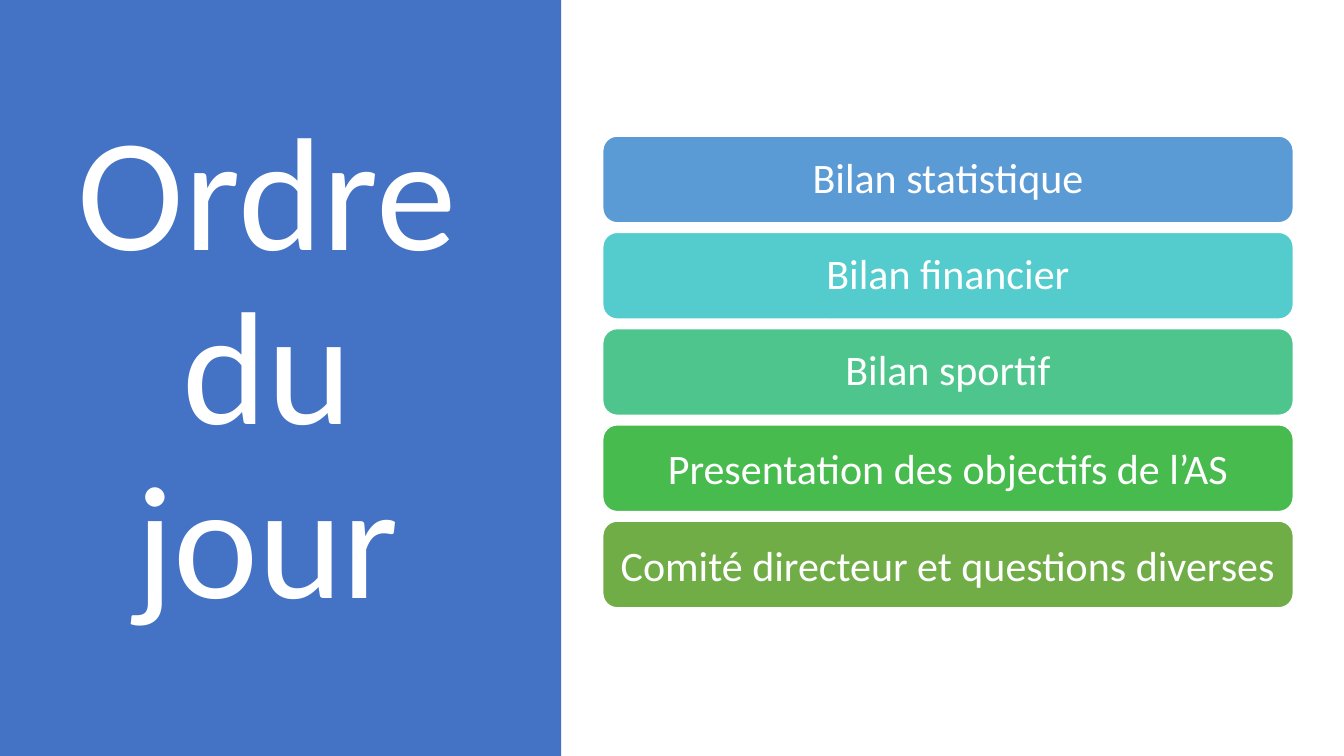
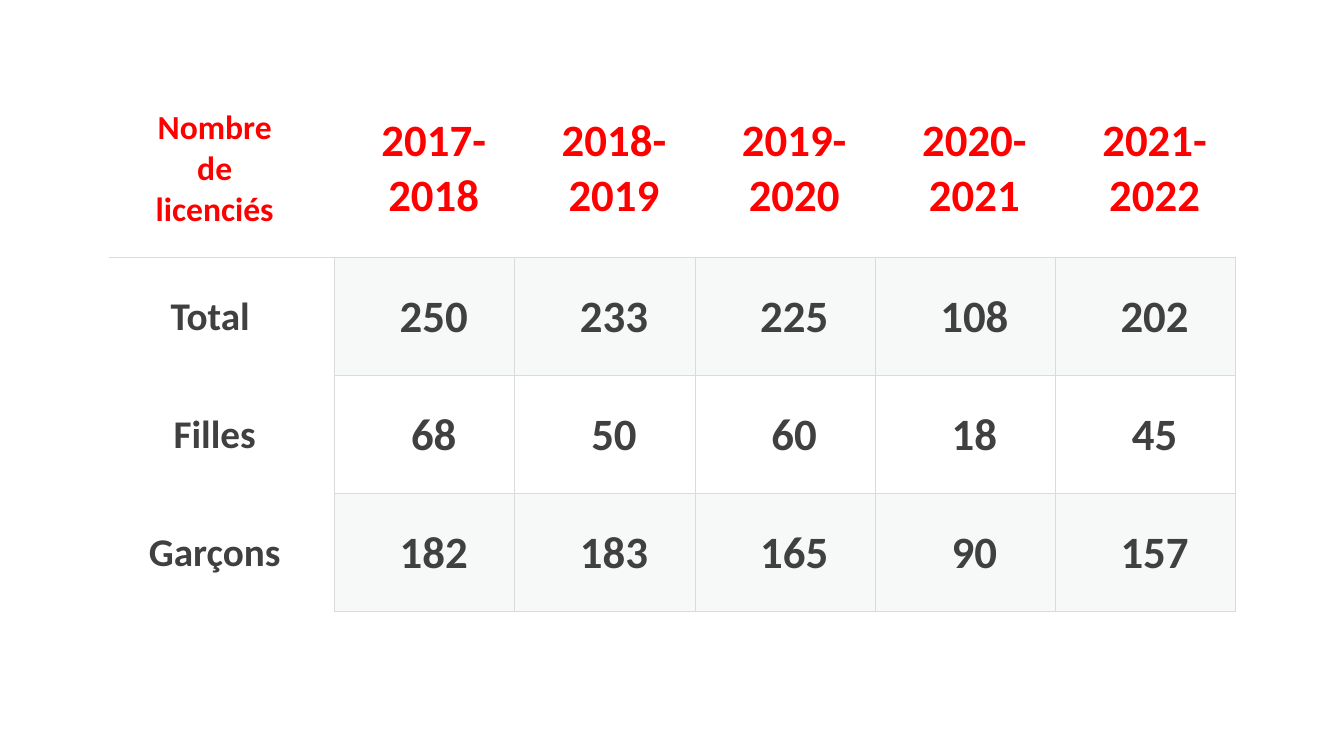
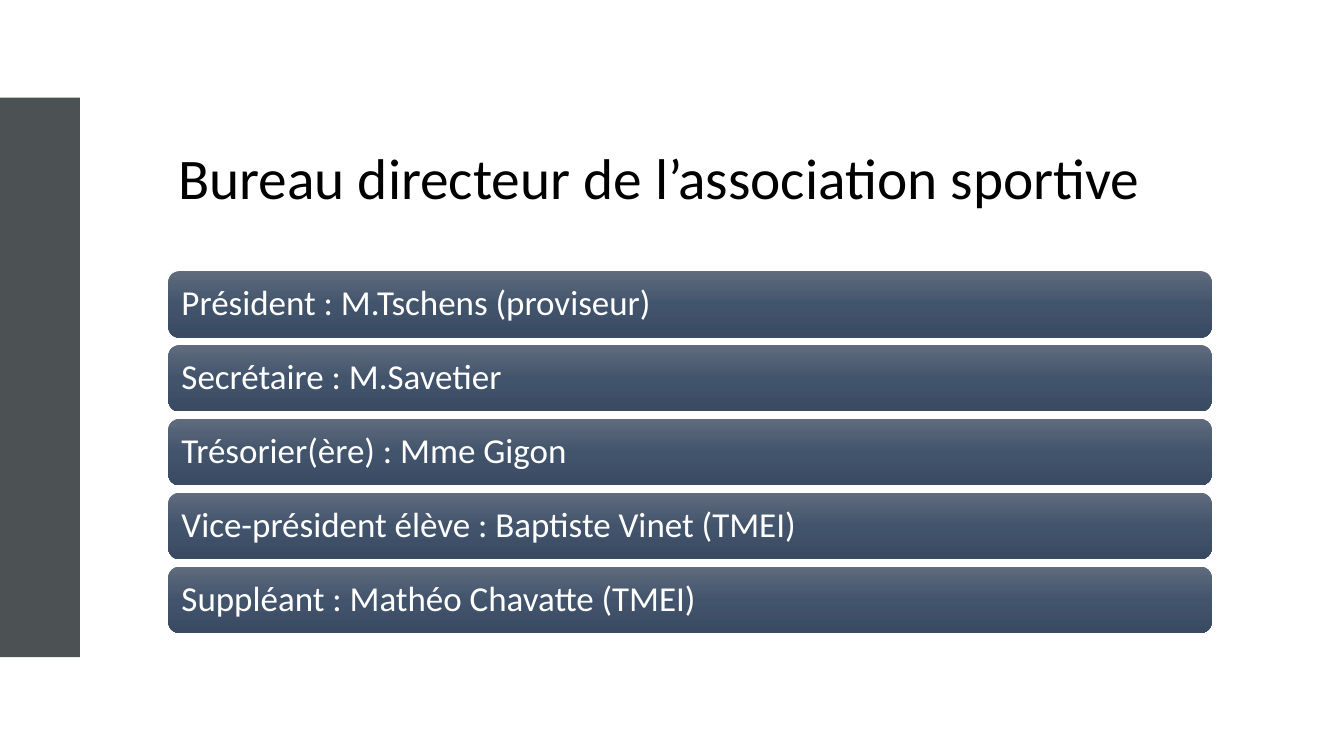
"""Build three slides for a school sports association meeting."""
from copy import deepcopy
from dataclasses import dataclass

from lxml.etree import SubElement
from pptx import Presentation
from pptx.dml.color import RGBColor
from pptx.enum.shapes import MSO_SHAPE as Preset
from pptx.enum.text import MSO_ANCHOR as Anchor, PP_ALIGN as Align
from pptx.oxml.ns import qn
from pptx.util import Inches, Pt

FONT = "Calibri"
WHITE, BLACK, RED, INK = "FFFFFF", "000000", "FF0000", "404040"
BLUE, SLATE = "4472C4", "4C5254"
RULE, TINT = "D8DCDC", "D8DEDC"
STEEL = ((0, "606B7D"), (0.5, "42546C"), (1, "394A62"))
SLIDE_WIDTH, SLIDE_HEIGHT = Inches(13.333), Inches(7.5)
SIDES = ("L", "R", "T", "B")


@dataclass(frozen=True)
class Box:
    """A rectangle in percent of the slide's width and height."""
    left: float
    top: float
    width: float
    height: float

    def lengths(self):
        return across(self.left), down(self.top), across(self.width), down(self.height)


@dataclass(frozen=True)
class Bar:
    """One rounded bar; without a colour it takes the steel gradient."""
    label: str
    color: str | None = None
    spacing: float = 0.9


AGENDA = (
    Bar("Bilan statistique", "5B9BD5"),
    Bar("Bilan financier", "54CCCD"),
    Bar("Bilan sportif", "4DC58D"),
    Bar("Presentation des objectifs de l’AS", "48BB4F", 1),
    Bar("Comité directeur et questions diverses", "70AD47", 1),
)
BOARD = (
    Bar("Président : M.Tschens (proviseur)"),
    Bar("Secrétaire : M.Savetier"),
    Bar("Trésorier(ère) : Mme Gigon"),
    Bar("Vice-président élève : Baptiste Vinet (TMEI)"),
    Bar("Suppléant : Mathéo Chavatte (TMEI)"),
)
MEMBERS = (
    ("Nombre de licenciés", "2017-2018", "2018-2019", "2019-2020", "2020-2021", "2021-2022"),
    ("Total ", "250", "233", "225", "108", "202"),
    ("Filles", "68", "50", "60", "18", "45"),
    ("Garçons", "182", "183", "165", "90", "157"),
)


def across(share: float) -> int:
    return round(SLIDE_WIDTH * share / 100)


def down(share: float) -> int:
    return round(SLIDE_HEIGHT * share / 100)


def rgb(color: str) -> RGBColor:
    return RGBColor.from_string(color)


def write(frame, text: str, *, size: float, color: str = WHITE, bold: bool = False,
          align=Align.LEFT, spacing: float = 1) -> None:
    paragraph = frame.paragraphs[0]
    paragraph.alignment, paragraph.line_spacing = align, spacing
    run = paragraph.add_run()
    run.text = text
    run.font.name, run.font.size, run.font.bold = FONT, Pt(size), bold
    run.font.color.rgb = rgb(color)


def draw_shape(slide, preset, box: Box):
    shape = slide.shapes.add_shape(preset, *box.lengths())
    shape.shadow.inherit = False
    shape.line.fill.background()
    return shape


def draw_band(slide, box: Box, color: str) -> None:
    band = draw_shape(slide, Preset.RECTANGLE, box)
    band.fill.solid()
    band.fill.fore_color.rgb = rgb(color)


def draw_title(slide, box: Box, text: str, **text_format) -> None:
    frame = slide.shapes.add_textbox(*box.lengths()).text_frame
    frame.word_wrap, frame.vertical_anchor = True, Anchor.MIDDLE
    write(frame, text, spacing=0.9, **text_format)


def fill_steel(shape) -> None:
    shape.fill.gradient()
    shape.fill.gradient_angle = 270
    stop_list = shape._element.spPr.find(".//" + qn("a:gsLst"))
    stop_list.append(deepcopy(stop_list[0]))
    for stop, (position, color) in zip(shape.fill.gradient_stops, STEEL):
        stop.position, stop.color.rgb = position, rgb(color)


def draw_bars(slide, area: Box, bars: tuple[Bar, ...], bar_height: float,
              inset: float, **text_format) -> None:
    """Spread the bars evenly from the top to the bottom of the area."""
    pitch = (area.height - bar_height) / (len(bars) - 1)
    for index, bar in enumerate(bars):
        box = Box(area.left, area.top + index * pitch, area.width, bar_height)
        shape = draw_shape(slide, Preset.ROUNDED_RECTANGLE, box)
        if bar.color:
            shape.fill.solid()
            shape.fill.fore_color.rgb = rgb(bar.color)
            shape.line.color.rgb, shape.line.width = rgb(WHITE), Pt(1)
        else:
            fill_steel(shape)
        frame = shape.text_frame
        frame.word_wrap, frame.vertical_anchor = True, Anchor.MIDDLE
        frame.margin_left = frame.margin_right = Inches(inset)
        frame.margin_top = frame.margin_bottom = Inches(inset)
        write(frame, bar.label, spacing=bar.spacing, **text_format)


def set_borders(cell, ruled: str) -> None:
    """Rule the named sides of a cell and clear the others."""
    properties = cell._tc.get_or_add_tcPr()
    for place, side in enumerate(SIDES):
        line = SubElement(properties, qn(f"a:ln{side}"), w=str(Pt(0.75)))
        properties.insert(place, line)
        if side in ruled:
            SubElement(SubElement(line, qn("a:solidFill")), qn("a:srgbClr"), val=RULE)
        else:
            SubElement(line, qn("a:noFill"))


def tint_cell(cell) -> None:
    cell.fill.solid()
    cell.fill.fore_color.rgb = rgb(TINT)
    color = cell._tc.tcPr.find(qn("a:solidFill")).find(qn("a:srgbClr"))
    SubElement(color, qn("a:alpha"), val="20000")


def draw_members(slide, box: Box, label_width: float, header_height: float) -> None:
    rows, columns = len(MEMBERS), len(MEMBERS[0])
    table = slide.shapes.add_table(rows, columns, *box.lengths()).table
    table.first_row = table.horz_banding = False
    for index, column in enumerate(table.columns):
        year_width = (box.width - label_width) / (columns - 1)
        column.width = across(year_width if index else label_width)
    for index, row in enumerate(table.rows):
        group_height = (box.height - header_height) / (rows - 1)
        row.height = down(group_height if index else header_height)
    for r, values in enumerate(MEMBERS):
        for c, value in enumerate(values):
            cell = table.cell(r, c)
            cell.vertical_anchor = Anchor.MIDDLE
            cell.margin_left, cell.margin_right = Inches(0.28), Inches(0.1 if c else 0.42)
            cell.margin_top = cell.margin_bottom = Inches(0.14)
            if c and r % 2:
                tint_cell(cell)
            else:
                cell.fill.background()
            if r == 0:
                ruled = "B"
            elif c == 0:
                ruled = "TR" if r == 1 else "R"
            else:
                ruled = "LRTB"
            set_borders(cell, ruled)
            size = 32 if c else 28 if r else 24
            write(cell.text_frame, value, size=size, color=INK if r else RED,
                  bold=True, align=Align.CENTER)


def build_agenda(slide) -> None:
    draw_band(slide, Box(0, 0, 41.75, 100), BLUE)
    draw_title(slide, Box(4.28, 9.07, 31.2, 80.27), "Ordre du jour",
               size=115, align=Align.CENTER)
    draw_bars(slide, Box(44.85, 18, 51.38, 62.4), AGENDA, 11.47, 0.12,
              size=30, align=Align.CENTER)


def build_members(slide) -> None:
    draw_members(slide, Box(8.1, 10.53, 83.85, 70.4), 16.8, 23.57)


def build_board(slide) -> None:
    draw_band(slide, Box(0, 12.93, 5.95, 74), SLATE)
    draw_title(slide, Box(12.53, 15.33, 77.63, 17.2),
               "Bureau directeur de l’association sportive", size=41, color=BLACK)
    draw_bars(slide, Box(12.53, 35.87, 77.63, 47.87), BOARD, 8.8, 0.1, size=25)


def main() -> None:
    deck = Presentation()
    deck.slide_width, deck.slide_height = SLIDE_WIDTH, SLIDE_HEIGHT
    for build in (build_agenda, build_members, build_board):
        build(deck.slides.add_slide(deck.slide_layouts[6]))
    deck.save("out.pptx")


if __name__ == "__main__":
    main()
